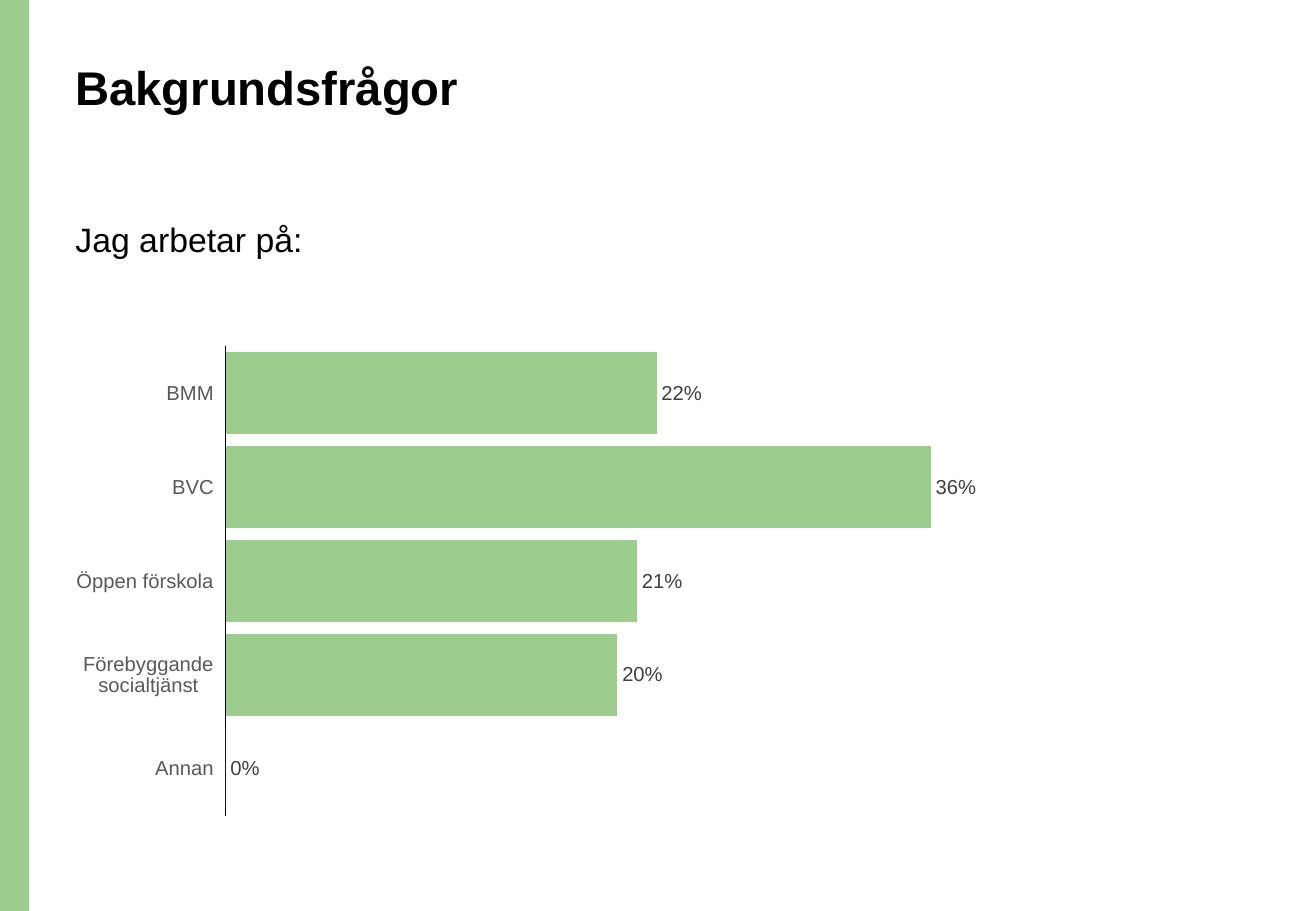
from dataclasses import dataclass

from lxml.etree import SubElement
from pptx import Presentation
from pptx.chart.data import CategoryChartData
from pptx.dml.color import RGBColor
from pptx.enum.chart import (XL_CHART_TYPE, XL_LABEL_POSITION,
                             XL_TICK_LABEL_POSITION, XL_TICK_MARK)
from pptx.enum.shapes import MSO_SHAPE
from pptx.enum.text import MSO_ANCHOR, MSO_AUTO_SIZE, PP_ALIGN
from pptx.oxml import parse_xml
from pptx.oxml.ns import nsdecls, qn
from pptx.util import Pt


@dataclass(frozen=True)
class Theme:
    font: str = "Arial"
    green: str = "9DCC8F"
    black: str = "000000"
    axis: str = "595959"
    label: str = "404040"
    title: int = 28
    body: int = 20
    small: int = 12
    chart: int = 10


THEME = Theme()
SHARES = {
    "BMM": 0.22,
    "BVC": 0.36,
    "Öppen förskola": 0.21,
    "Förebyggande socialtjänst": 0.2,
    "Annan": 0,
}


def rgb(code):
    return RGBColor.from_string(code)


def style(font, size, color, bold=False):
    font.name = THEME.font
    font.size = Pt(size)
    font.bold = bold
    font.color.rgb = rgb(color)


def place(shape, left, top, width, height):
    shape.left, shape.top = Pt(left), Pt(top)
    shape.width, shape.height = Pt(width), Pt(height)


def write(shape, text, *, size, color=THEME.black, bold=False):
    frame = shape.text_frame
    frame.word_wrap = True
    frame.auto_size = MSO_AUTO_SIZE.NONE
    frame.vertical_anchor = MSO_ANCHOR.TOP
    para = frame.paragraphs[0]
    para.alignment = PP_ALIGN.LEFT
    para.line_spacing = 0.9
    para.space_before = Pt(0)
    props = para._p.get_or_add_pPr()
    props.set("marL", "0")
    props.set("indent", "0")
    SubElement(props, qn("a:buNone"))
    run = para.add_run()
    run.text = text
    style(run.font, size, color, bold)


def add_band(slide, width, height):
    band = slide.shapes.add_shape(MSO_SHAPE.RECTANGLE, 0, 0, width, height)
    band.shadow.inherit = False
    band.fill.solid()
    band.fill.fore_color.rgb = rgb(THEME.green)
    band.line.fill.background()
    # Behind the placeholders
    slide.shapes._spTree.insert(2, band._element)


def set_plot(chart, x, y, w, h):
    """Fix the inner plot area, in fractions of the chart."""
    area = chart._chartSpace.chart.plotArea
    for old in area.findall(qn("c:layout")):
        area.remove(old)
    sizes = "".join(f'<c:{key} val="{val}"/>'
                    for key, val in zip("xywh", (x, y, w, h)))
    area.insert(0, parse_xml(
        f'<c:layout {nsdecls("c")}><c:manualLayout>'
        '<c:layoutTarget val="inner"/><c:xMode val="edge"/>'
        f'<c:yMode val="edge"/>{sizes}</c:manualLayout></c:layout>'))


def add_bars(slide, shares, left, top, width, height):
    data = CategoryChartData(number_format="0%")
    data.categories = list(shares)
    data.add_series("Series 1", list(shares.values()))
    chart = slide.shapes.add_chart(
        XL_CHART_TYPE.BAR_CLUSTERED, Pt(left), Pt(top), Pt(width),
        Pt(height), data).chart
    chart.has_title = False
    chart.has_legend = False
    style(chart.font, THEME.chart, THEME.black)

    cats = chart.category_axis
    cats.reverse_order = True
    cats.has_major_gridlines = False
    cats.major_tick_mark = cats.minor_tick_mark = XL_TICK_MARK.NONE
    cats.tick_label_position = XL_TICK_LABEL_POSITION.LOW
    cats.format.line.color.rgb = rgb(THEME.black)
    cats.format.line.width = Pt(0.75)
    style(cats.tick_labels.font, THEME.small, THEME.axis)

    scale = chart.value_axis
    scale.minimum_scale, scale.maximum_scale = 0, 0.4
    scale.has_major_gridlines = False
    scale.visible = False

    plot = chart.plots[0]
    plot.gap_width = 15
    plot.vary_by_categories = False
    fill = plot.series[0].format.fill
    fill.solid()
    fill.fore_color.rgb = rgb(THEME.green)
    plot.has_data_labels = True
    labels = plot.data_labels
    labels.show_value = True
    labels.number_format = "0%"
    labels.number_format_is_linked = False
    labels.position = XL_LABEL_POSITION.OUTSIDE_END
    style(labels.font, THEME.small, THEME.label)
    set_plot(chart, 0.17, 0.02, 0.82, 0.96)


def main():
    deck = Presentation()
    deck.slide_width, deck.slide_height = Pt(780), Pt(540)
    slide = deck.slides.add_slide(deck.slide_layouts[1])
    add_band(slide, Pt(17.3), deck.slide_height)

    title, body = slide.placeholders
    place(title, 37.5, 34.5, 672.5, 73.5)
    write(title, "Bakgrundsfrågor", size=THEME.title, bold=True)
    place(body, 37.5, 129, 434, 53.5)
    write(body, "Jag arbetar på:", size=THEME.body)

    add_bars(slide, SHARES, 37.5, 199.5, 566.5, 290)
    deck.save("out.pptx")


if __name__ == "__main__":
    main()
